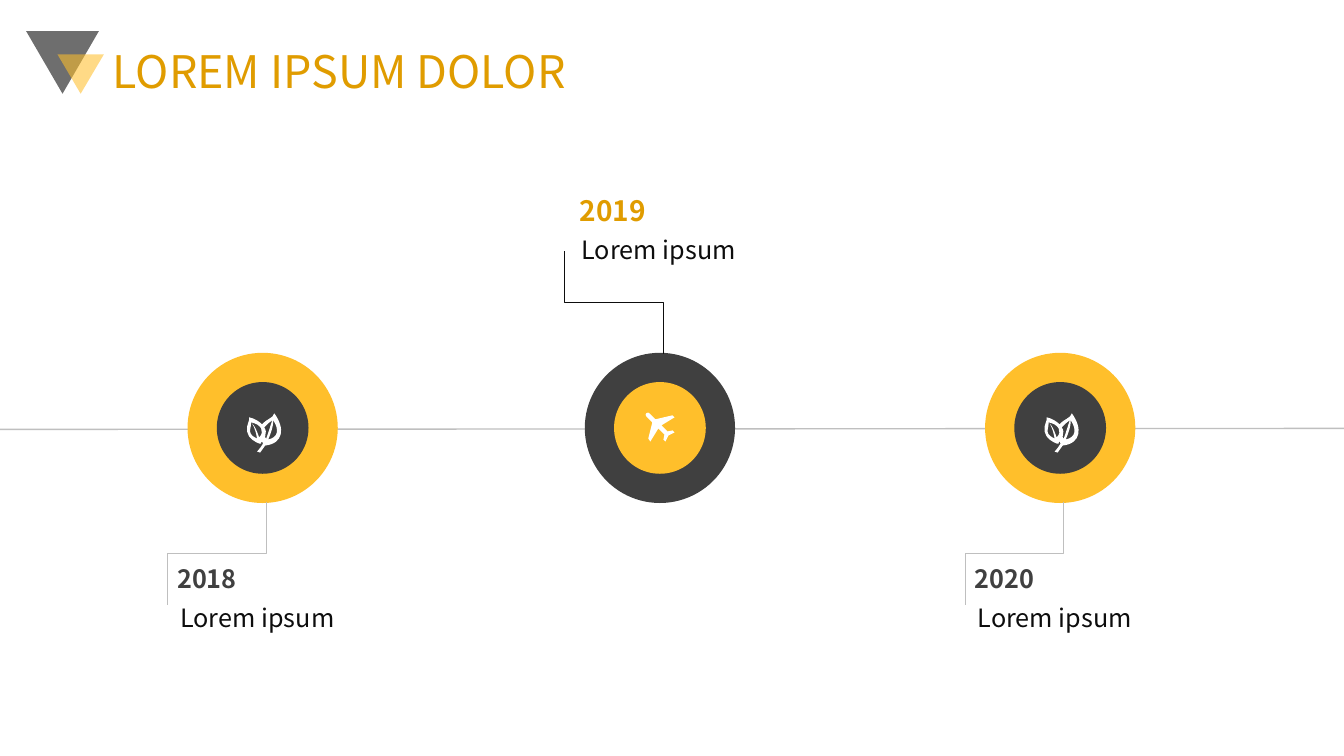
import pptx
import pptx.util
import pptx.dml.color
import pptx.enum.shapes
import pptx.enum.text
import pptx.oxml.ns
import lxml.etree

# Content
TITLE = "LOREM IPSUM DOLOR"
NODES = [  # left, year, text, kind
    (5.8, "2019", "Lorem ipsum", "high"),
    (1.86, "2018", "Lorem ipsum", "low"),
    (9.77, "2020", "Lorem ipsum", "low"),
]
FONT = "Noto Sans CJK JP"
HEX = {"gold": "FFBF2B", "amber": "E09C00", "dark": "404040", "ink": "0D0D0D",
       "grey": "BFBFBF", "black": "000000", "white": "FFFFFF"}

# Icon outlines in hundredths of an inch: start, then lines (2) or curves (6)
LEAF = [
    [(17, 30), (17, 30, 16, 29, 16, 28), (15, 28, 15, 29, 15, 30), (14, 30), (13, 30),
     (10, 29, 2, 25, 1, 18), (0, 11, 4, 8, 3, 4), (8, 5, 13, 8, 16, 11),
     (21, 5, 27, 5, 28, 0), (39, 15, 37, 30, 19, 32), (17, 34, 16, 37, 14, 39),
     (11, 38), (13, 36, 15, 33, 17, 30)],
    [(19, 23), (19, 24, 19, 25, 20, 25), (22, 20, 24, 13, 26, 7),
     (24, 9, 21, 10, 19, 13), (19, 13, 18, 13, 18, 14), (20, 16, 20, 20, 19, 23)],
    [(11, 25), (10, 20, 9, 15, 6, 10), (9, 13, 11, 18, 13, 24),
     (19, 18, 15, 11, 5, 9), (6, 11, 4, 13, 4, 18), (4, 22, 9, 24, 11, 25)],
    [(22, 26), (32, 24, 33, 16, 27, 7), (27, 13, 25, 19, 22, 26)],
]
PLANE = [
    [(27, 18), (22, 19), (16, 13), (29, 5), (27, 3), (10, 7), (4, 1),
     (4, 0, 2, 0, 1, 1), (0, 2, 0, 3, 1, 4), (7, 10), (3, 26), (5, 29),
     (13, 16), (19, 22), (18, 27), (20, 29), (23, 23), (29, 20)],
]

# Each kind: colours, icon with side and offset, link, year and text boxes
KINDS = {
    "low": dict(ring="gold", dot="dark", icon=LEAF, side=39, spot=(0.58, 4.1),
                link="grey", top=5.0, turn=90, flip=False, tint="dark", size=18,
                year=(-0.2, 5.57, 1.52, 0.4), text=(-0.17, 5.93, 2.79, 0.71)),
    "high": dict(ring="dark", dot="gold", icon=PLANE, side=29, spot=(0.6, 4.09),
                 link="ink", top=2.51, turn=270, flip=True, tint="amber", size=20,
                 year=(-0.15, 1.91, 1.52, 0.44), text=(-0.13, 2.28, 2.79, 0.71)),
}
RING, DOT, ROW = 1.49, 0.91, 3.5
LINK = (-0.22, 1.02, 0.98)

inch = pptx.util.Inches
Pt = pptx.util.Pt
MSO = pptx.enum.shapes.MSO_SHAPE
WIRE = pptx.enum.shapes.MSO_CONNECTOR
qn = pptx.oxml.ns.qn

deck = pptx.Presentation()
deck.slide_width, deck.slide_height = inch(13.33), inch(7.5)
slide = deck.slides.add_slide(deck.slide_layouts[6])
shapes = slide.shapes


def rgb(name):
    return pptx.dml.color.RGBColor.from_string(HEX[name])


def paint(shape, color):
    shape.shadow.inherit = False
    shape.fill.solid()
    shape.fill.fore_color.rgb = rgb(color)
    shape.line.fill.background()
    return shape


def solid(kind, box, color):
    return paint(shapes.add_shape(kind, *map(inch, box)), color)


def wire(kind, ends, color, width):
    line = shapes.add_connector(kind, *map(inch, ends))
    line.line.color.rgb = rgb(color)
    line.line.width = Pt(width)
    lxml.etree.SubElement(line._element.spPr, qn("a:effectLst"))
    return line


def label(box, text, size, color, bold=False, gap=None, middle=False):
    frame = shapes.add_textbox(*map(inch, box)).text_frame
    frame.word_wrap = True
    if middle:
        frame.vertical_anchor = pptx.enum.text.MSO_ANCHOR.MIDDLE
    frame.text = text
    para = frame.paragraphs[0]
    para.line_spacing = gap
    font = para.runs[0].font
    font.name, font.size, font.bold = FONT, Pt(size), bold
    font.color.rgb = rgb(color)


def draw(icon, side, left, top):
    pen = shapes.build_freeform(*icon[0][0], scale=inch(0.01))
    for i, loop in enumerate(icon):
        if i:
            pen.move_to(*loop[0])
        pen.add_line_segments([part[-2:] for part in loop[1:]], close=True)
    shape = paint(pen.convert_to_shape(), "white")
    shape.left, shape.top = inch(left), inch(top)
    shape.width = shape.height = inch(side / 100)

    # Bend the segments that have control points
    track = next(shape._element.iter(qn("a:path")))
    track.set("w", str(side))
    track.set("h", str(side))
    steps = [step for step in track if step.tag != qn("a:close")]
    for step, part in zip(steps, [part for loop in icon for part in loop]):
        if len(part) == 6:
            bend = lxml.etree.Element(qn("a:cubicBezTo"))
            track.replace(step, bend)
            step = bend
        for old in list(step):
            step.remove(old)
        for x, y in zip(part[::2], part[1::2]):
            dot = lxml.etree.SubElement(step, qn("a:pt"))
            dot.set("x", str(x))
            dot.set("y", str(y))


# Corner triangles
for box, color in (((0.26, 0.31, 0.72, 0.62), "black"),
                   ((0.57, 0.54, 0.46, 0.39), "gold")):
    mark = solid(MSO.ISOSCELES_TRIANGLE, box, color)
    mark.rotation = 180
    for tone in mark._element.spPr.iter(qn("a:srgbClr")):
        lxml.etree.SubElement(tone, qn("a:alpha")).set("val", "57000")

# Time axis
wire(WIRE.STRAIGHT, (0, 4.26, 13.33, 4.25), "grey", 1)

# Nodes with link, year, icon and text
for left, year, text, kind in NODES:
    k = KINDS[kind]
    inset = (RING - DOT) / 2
    solid(MSO.FLOWCHART_CONNECTOR, (left, ROW, RING, RING), k["ring"])
    solid(MSO.FLOWCHART_CONNECTOR, (left + inset, ROW + inset, DOT, DOT), k["dot"])

    shift, wide, high = LINK
    start, end = left + shift, left + shift + wide
    if k["flip"]:
        start, end = end, start
    link = wire(WIRE.ELBOW, (start, k["top"], end, k["top"] + high), k["link"], 0.5)
    link._element.spPr.xfrm.set("rot", str(k["turn"] * 60000))

    dx, *rest = k["year"]
    label((left + dx, *rest), year, k["size"], k["tint"], bold=True, gap=0.9)
    dx, top = k["spot"]
    draw(k["icon"], k["side"], left + dx, top)
    dx, *rest = k["text"]
    label((left + dx, *rest), text, 18, "ink")

# Title
label((1.02, 0.31, 11.5, 0.85), TITLE, 32, "amber", gap=0.9, middle=True)

deck.save("out.pptx")
